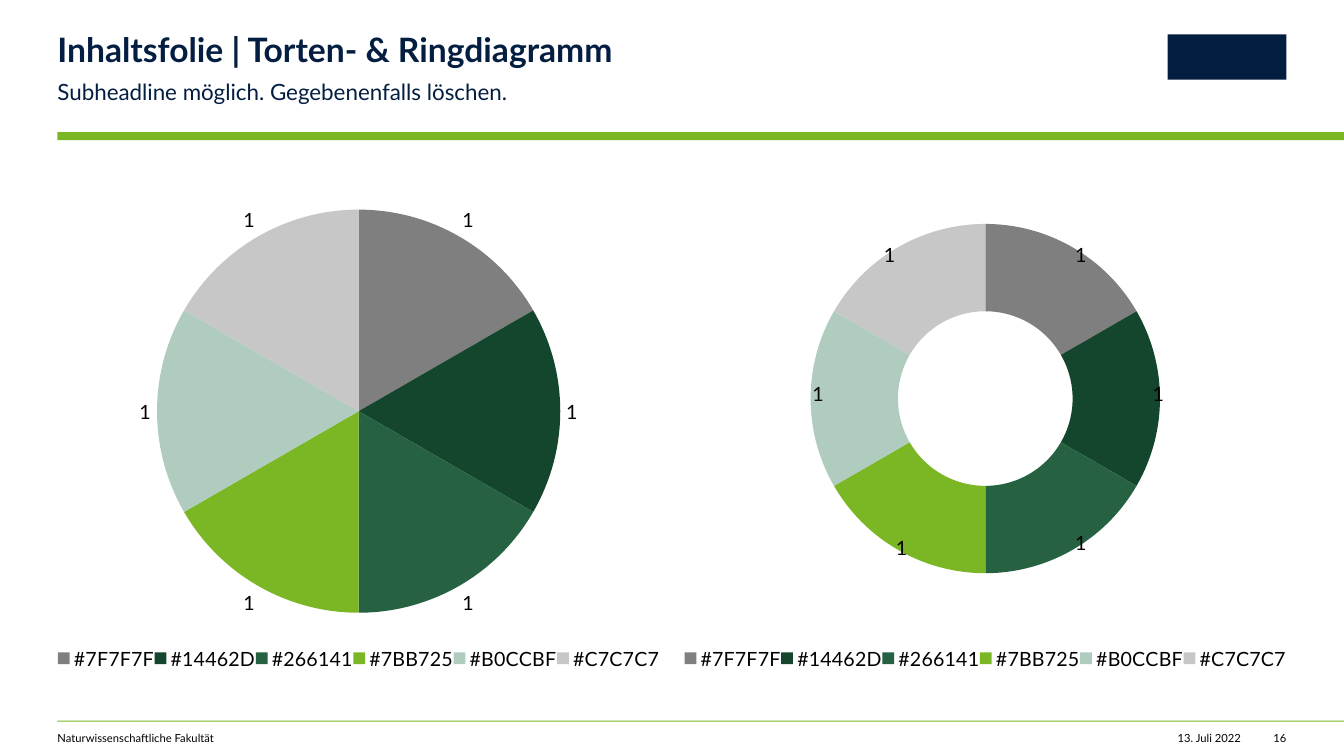
from copy import deepcopy

from pptx import Presentation
from pptx.chart.data import CategoryChartData
from pptx.dml.color import RGBColor
from pptx.enum.chart import XL_CHART_TYPE, XL_LABEL_POSITION, XL_LEGEND_POSITION
from pptx.enum.shapes import MSO_SHAPE
from pptx.enum.text import MSO_ANCHOR, PP_ALIGN
from pptx.oxml import parse_xml
from pptx.oxml.ns import nsdecls, qn
from pptx.util import Inches, Pt

WIDTH, HEIGHT = 13.33, 7.5
MARGIN, GUTTER = 0.57, 0.24
COLUMN = (WIDTH - 2 * MARGIN - GUTTER) / 2
NAVY, GREEN, BLACK = "041E42", "7BB725", "000000"
SLICES = ["7F7F7F", "14462D", "266141", GREEN, "B0CCBF", "C7C7C7"]

# Areas and shifts as shares of the chart's width and height
PIE_AREA = {"x": 0.16, "y": 0.06, "w": 0.68, "h": 0.8}
RING_AREA = {"x": 0.21, "y": 0.08, "w": 0.58, "h": 0.71}
LEGEND_AREA = {"x": 0, "y": 0.91, "w": 1, "h": 0.08}
RING_LABEL_SHIFTS = [(0.05, -0.06), (0.07, -0.01), (0.05, 0.06),
                     (-0.03, 0.07), (-0.06, -0.01), (-0.05, -0.06)]


def rgb(value):
    return RGBColor.from_string(value)


def inches(box):
    return [Inches(length) for length in box]


def apply(target, formats):
    for name, value in formats.items():
        setattr(target, name, value)


def style_font(font, size, color=BLACK, bold=False, name="Lato"):
    apply(font, {"name": name, "size": Pt(size), "bold": bold})
    font.color.rgb = rgb(color)


def write(holder, box, text, size, color=BLACK, bold=False, **paragraph_formats):
    left, top, width, height = inches(box)
    apply(holder, {"left": left, "top": top, "width": width, "height": height})
    frame = holder.text_frame
    apply(frame, {"margin_left": 0, "margin_top": 0, "margin_right": 0,
                  "margin_bottom": 0, "word_wrap": True,
                  "vertical_anchor": MSO_ANCHOR.TOP})
    paragraph = frame.paragraphs[0]
    apply(paragraph, {"alignment": PP_ALIGN.LEFT, "space_before": Pt(0),
                      **paragraph_formats})
    run = paragraph.add_run()
    run.text = text
    style_font(run.font, size, color, bold)
    return paragraph


def add_bar(slide, box, color):
    bar = slide.shapes.add_shape(MSO_SHAPE.RECTANGLE, *inches(box))
    bar.shadow.inherit = False
    bar.fill.solid()
    bar.fill.fore_color.rgb = rgb(color)
    bar.line.fill.background()


def add_header(slide, box):
    left, top, width, height = box
    title, subheadline = slide.placeholders
    text_width = width * 0.59
    write(title, (left, top + 0.33, text_width, 0.36),
          "Inhaltsfolie | Torten- & Ringdiagramm", 24, NAVY, True, line_spacing=0.9)
    paragraph = write(subheadline, (left, top + 0.75, text_width, 0.27),
                      "Subheadline möglich. Gegebenenfalls löschen.", 16, NAVY,
                      line_spacing=1.1, space_after=Pt(12))
    properties = paragraph._p.get_or_add_pPr()
    for name in ("marL", "indent"):
        properties.set(name, "0")
    properties.append(parse_xml(f"<a:buNone {nsdecls('a')}/>"))
    add_bar(slide, (left + width - MARGIN - 1.18, top + 0.34, 1.18, 0.45), NAVY)
    add_bar(slide, (left, top + height - 0.08, width, 0.08), GREEN)


def add_footer(slide, box):
    left, top, width, _ = box
    add_bar(slide, (left, top, width, 0.01), GREEN)
    right = left + width - MARGIN
    for text, start, length, alignment in [
            ("Naturwissenschaftliche Fakultät", left, COLUMN, PP_ALIGN.LEFT),
            ("13. Juli 2022", right - 1.45, 1, PP_ALIGN.RIGHT),
            ("16", right - 0.3, 0.3, PP_ALIGN.RIGHT)]:
        area = (start, top + 0.11, length, 0.13)
        write(slide.shapes.add_textbox(*inches(area)), area, text, 8,
              alignment=alignment)


def manual_layout(values, modes=""):
    lengths = "".join(f'<c:{name} val="{value}"/>' for name, value in values.items())
    return parse_xml(f"<c:layout {nsdecls('c')}><c:manualLayout>{modes}{lengths}"
                     "</c:manualLayout></c:layout>")


def place(part, index, area, target=""):
    """Fix a chart part to an area, with the layout as its child at index."""
    for layout in part.findall(qn("c:layout")):
        part.remove(layout)
    edges = '<c:xMode val="edge"/><c:yMode val="edge"/>'
    part.insert(index, manual_layout(area, target + edges))


def add_share_chart(slide, box, kind, plot_area):
    data = CategoryChartData()
    data.categories = [f"#{color}" for color in SLICES]
    data.add_series("Series 1", [1] * len(SLICES))
    chart = slide.shapes.add_chart(kind, *inches(box), data).chart
    apply(chart, {"has_title": False, "has_legend": True})
    style_font(chart.font, 10, name="Arial")
    apply(chart.legend, {"position": XL_LEGEND_POSITION.BOTTOM,
                         "include_in_layout": False})
    style_font(chart.legend.font, 14)
    plot = chart.plots[0]
    place(chart.legend._element, 1, LEGEND_AREA)
    place(plot._element.getparent(), 0, plot_area, '<c:layoutTarget val="inner"/>')
    series = plot.series[0]
    for index, color in enumerate(SLICES):
        fill = series.points[index].format.fill
        fill.solid()
        fill.fore_color.rgb = rgb(color)
    series.data_labels.show_value = True
    style_font(series.data_labels.font, 14)
    return plot


def add_pie(slide, box):
    plot = add_share_chart(slide, box, XL_CHART_TYPE.PIE, PIE_AREA)
    plot.series[0].data_labels.position = XL_LABEL_POSITION.OUTSIDE_END


def add_ring(slide, box):
    ring = add_share_chart(slide, box, XL_CHART_TYPE.DOUGHNUT, RING_AREA)._element
    ring.find(qn("c:holeSize")).set("val", "80")
    labels = ring.find(qn("c:ser")).find(qn("c:dLbls"))
    text_format = labels.find(qn("c:txPr"))
    flags = "".join(f'<c:show{name} val="{int(name == "Val")}"/>' for name in
                    ("LegendKey", "Val", "CatName", "SerName", "Percent", "BubbleSize"))
    for index, (x, y) in enumerate(RING_LABEL_SHIFTS):
        label = parse_xml(f'<c:dLbl {nsdecls("c")}><c:idx val="{index}"/>'
                          f'{flags}</c:dLbl>')
        label.insert(1, manual_layout({"x": x, "y": y}))
        label.insert(2, deepcopy(text_format))
        labels.insert(index, label)


def main():
    presentation = Presentation()
    apply(presentation, {"slide_width": Inches(WIDTH), "slide_height": Inches(HEIGHT)})
    slide = presentation.slides.add_slide(presentation.slide_layouts[1])
    add_header(slide, (MARGIN, 0, WIDTH - MARGIN, 1.39))
    add_pie(slide, (MARGIN, 1.78, COLUMN, 5))
    add_ring(slide, (MARGIN + COLUMN + GUTTER, 1.78, COLUMN, 5))
    add_footer(slide, (MARGIN, 7.15, WIDTH - MARGIN, 0.35))
    presentation.save("out.pptx")


if __name__ == "__main__":
    main()
